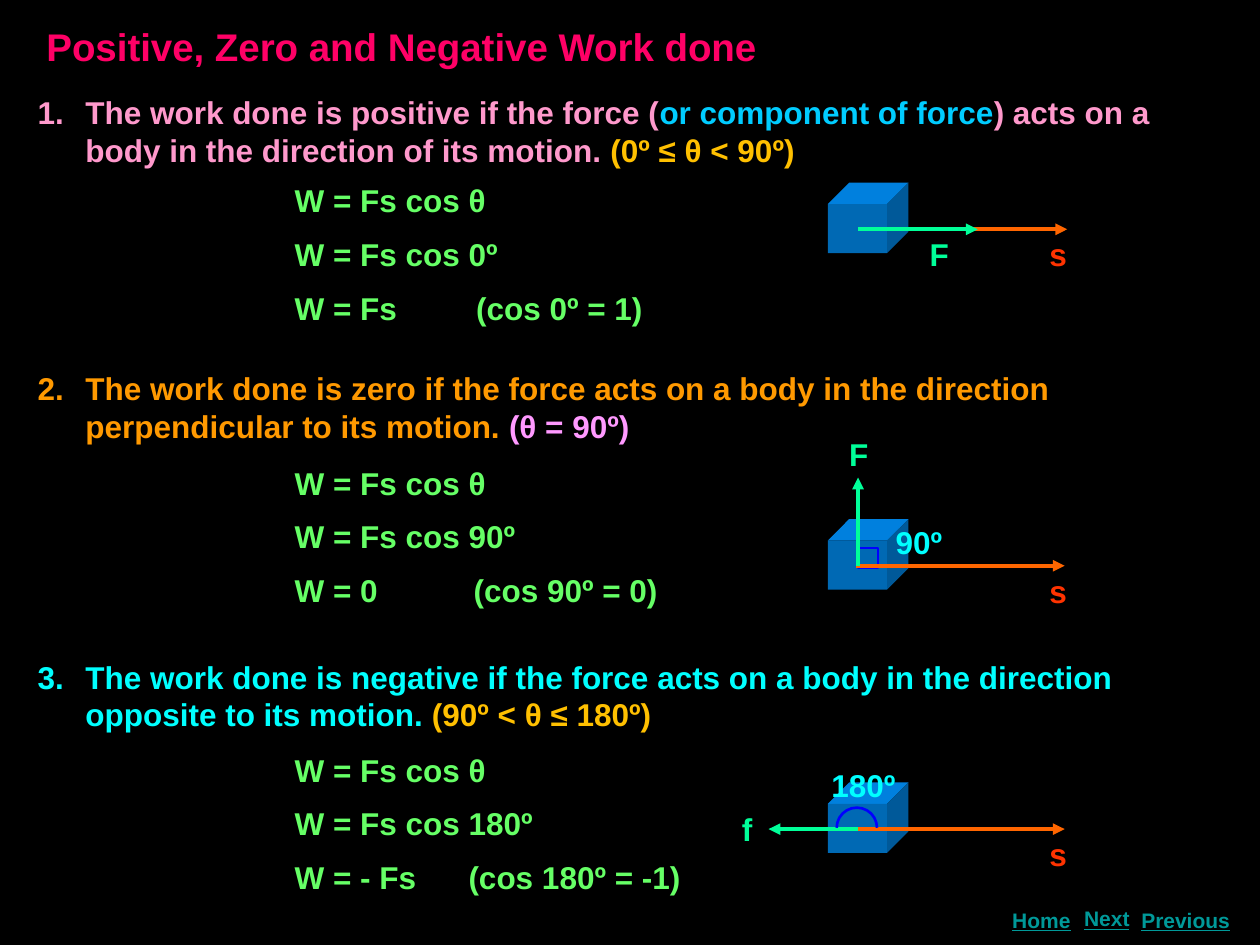
from lxml import etree
from pptx import Presentation, util as u
from pptx.dml.color import RGBColor
from pptx.enum import shapes, text
from pptx.oxml.ns import qn

BLACK = RGBColor(0x00, 0x00, 0x00)
ROSE = RGBColor(0xFF, 0x00, 0x66)
PINK = RGBColor(0xFF, 0x99, 0xCC)
SKY = RGBColor(0x00, 0xCC, 0xFF)
GOLD = RGBColor(0xFF, 0xC0, 0x00)
AMBER = RGBColor(0xFF, 0x99, 0x00)
LILAC = RGBColor(0xFF, 0x99, 0xFF)
CYAN = RGBColor(0x00, 0xFF, 0xFF)
LIME = RGBColor(0x66, 0xFF, 0x66)
MINT = RGBColor(0x00, 0xFF, 0x99)
RED = RGBColor(0xFF, 0x33, 0x00)
ORANGE = RGBColor(0xFF, 0x66, 0x00)
BLUE = RGBColor(0x00, 0x00, 0xFF)
TEAL = RGBColor(0x00, 0x99, 0x99)
FRONT = RGBColor(0x00, 0x69, 0xB4)
TOP = RGBColor(0x00, 0x80, 0xDE)
SIDE = RGBColor(0x00, 0x59, 0x99)


class Deck:
    """Style and current slide, with a method for each kind of element."""

    font = "Arial"
    size = 18
    gap = u.Pt(9)

    def __init__(self):
        self.prs = Presentation()
        self.prs.slide_width = u.Inches(10)
        self.prs.slide_height = u.Inches(7.5)
        self.slide = self.prs.slides.add_slide(self.prs.slide_layouts[6])
        fill = self.slide.background.fill
        fill.solid()
        fill.fore_color.rgb = BLACK

    def frame(self, x, y, w, h):
        box = self.slide.shapes.add_textbox(*map(u.Inches, (x, y, w, h)))
        frame = box.text_frame
        frame.word_wrap = True
        frame.auto_size = text.MSO_AUTO_SIZE.SHAPE_TO_FIT_TEXT
        return frame

    def style(self, run, color, size=None):
        font = run.font
        font.name, font.size, font.bold = self.font, u.Pt(size or self.size), True
        font.color.rgb = color

    def label(self, words, x, y, w, color, h=0.4, size=None):
        frame = self.frame(x, y, w, h)
        frame.text = words
        run = frame.paragraphs[0].runs[0]
        self.style(run, color, size)
        return frame.paragraphs[0]

    def point(self, num, y, w, parts):
        para = self.frame(0.2, y, w, 0.7).paragraphs[0]
        for words, color in parts:
            run = para.add_run()
            run.text = words
            self.style(run, color)
        props = para._p.get_or_add_pPr()
        props.set("marL", str(u.Inches(0.38)))
        props.set("indent", str(-u.Inches(0.38)))
        etree.SubElement(props, qn("a:buFont"), typeface=self.font)
        etree.SubElement(props, qn("a:buAutoNum"), type="arabicPeriod", startAt=str(num))

    def steps(self, y, w, stop, lines):
        frame = self.frame(2.24, y, w, 1.31)
        frame.text = "\n".join(lines)
        for para in frame.paragraphs:
            para.space_before = self.gap
            tabs = etree.SubElement(para._p.get_or_add_pPr(), qn("a:tabLst"))
            etree.SubElement(tabs, qn("a:tab"), pos=str(u.Inches(stop)), algn="l")
            for run in para.runs:
                self.style(run, LIME)

    def paint(self, shape, color):
        shape.shadow.inherit = False
        shape.fill.solid()
        shape.fill.fore_color.rgb = color
        shape.line.fill.background()

    def face(self, points, color):
        points = [(u.Inches(x), u.Inches(y)) for x, y in points]
        build = self.slide.shapes.build_freeform(*points[0])
        build.add_line_segments(points[1:])
        self.paint(build.convert_to_shape(), color)

    def cube(self, y, x=6.57, w=0.47, h=0.39, d=0.17):
        r, b = x + w, y + h
        self.face([(x, y), (x + d, y - d), (r + d, y - d), (r, y)], TOP)
        self.face([(r, y), (r + d, y - d), (r + d, b - d), (r, b)], SIDE)
        rect = self.slide.shapes.add_shape(
            shapes.MSO_SHAPE.RECTANGLE, *map(u.Inches, (x, y, w, h)))
        self.paint(rect, FRONT)

    def mark(self, kind, x, y, size):
        shape = self.slide.shapes.add_shape(kind, *map(u.Inches, (x, y, size, size)))
        shape.shadow.inherit = False
        shape.fill.background()
        shape.line.color.rgb = BLUE
        shape.line.width = u.Pt(1.5)
        return shape

    def arrow(self, x1, y1, x2, y2, color):
        line = self.slide.shapes.add_connector(
            shapes.MSO_CONNECTOR.STRAIGHT, *map(u.Inches, (x1, y1, x2, y2)))
        line.line.color.rgb = color
        line.line.width = u.Pt(2.25)
        etree.SubElement(line.line._get_or_add_ln(), qn("a:tailEnd"), type="triangle")
        etree.SubElement(line._element.spPr, qn("a:effectLst"))

    def link(self, words, x, y, w):
        para = self.label(words, x, y, w, TEAL, 0.3, 12)
        para.alignment = text.PP_ALIGN.CENTER
        para.runs[0].font.underline = True


def main():
    deck = Deck()
    deck.label("Positive, Zero and Negative Work done", 0.27, 0.13, 5.91, ROSE, 0.47, 22)

    # Three cases, each with its formula steps
    deck.point(1, 0.69, 9.37, [
        ("The work done is positive if the force (", PINK),
        ("or component of force", SKY),
        (") acts on a body in the direction of its motion. ", PINK),
        ("(0º ≤ θ < 90º)", GOLD)])
    deck.point(2, 2.88, 8.82, [
        ("The work done is zero if the force acts on a body in the direction "
         "perpendicular to its motion. ", AMBER),
        ("(θ = 90º)", LILAC)])
    deck.point(3, 5.17, 8.82, [
        ("The work done is negative if the force acts on a body in the direction "
         "opposite to its motion. ", CYAN),
        ("(90º < θ ≤ 180º)", GOLD)])
    for y, w, stop, angle, work, value in (
            (1.39, 3.07, 1.44, "0º", "Fs", "1"),
            (3.63, 3.31, 1.42, "90º", "0", "0"),
            (5.91, 3.31, 1.38, "180º", "- Fs", "-1")):
        deck.steps(y, w, stop, [
            "W = Fs cos θ",
            f"W = Fs cos {angle}",
            f"W = {work}\t(cos {angle} = {value})"])

    # Cubes with displacement and force arrows
    for top, mid, x, tip, name, at in (
            (1.62, 1.82, 6.81, (7.76, 1.82), "F", (7.28, 1.82)),
            (4.29, 4.49, 6.79, (6.81, 3.79), "F", (6.64, 3.4)),
            (6.38, 6.58, 6.79, (6.1, 6.58), "f", (5.79, 6.38))):
        deck.cube(top)
        if name == "F" and tip[1] < mid:
            deck.mark(shapes.MSO_SHAPE.RECTANGLE, 6.81, 4.35, 0.16)
        deck.arrow(x, mid, x + 1.66, mid, ORANGE)
        deck.arrow(6.81, mid, *tip, MINT)
        deck.label(name, *at, 0.39, MINT)
        deck.label("s", 8.23, mid, 0.39, RED)

    # Angle marks
    deck.label("90º", 7.01, 4.1, 0.58, CYAN)
    deck.label("180º", 6.5, 6.03, 0.74, CYAN)
    arc = deck.mark(shapes.MSO_SHAPE.ARC, 6.64, 6.41, 0.32)
    arc.adjustments[0] = 108
    arc.adjustments[1] = 0

    # Footer navigation
    deck.link("Home", 7.91, 7.15, 0.71)
    deck.link("Next", 8.47, 7.14, 0.63)
    deck.link("Previous", 8.94, 7.15, 0.94)

    deck.prs.save("out.pptx")


if __name__ == "__main__":
    main()
